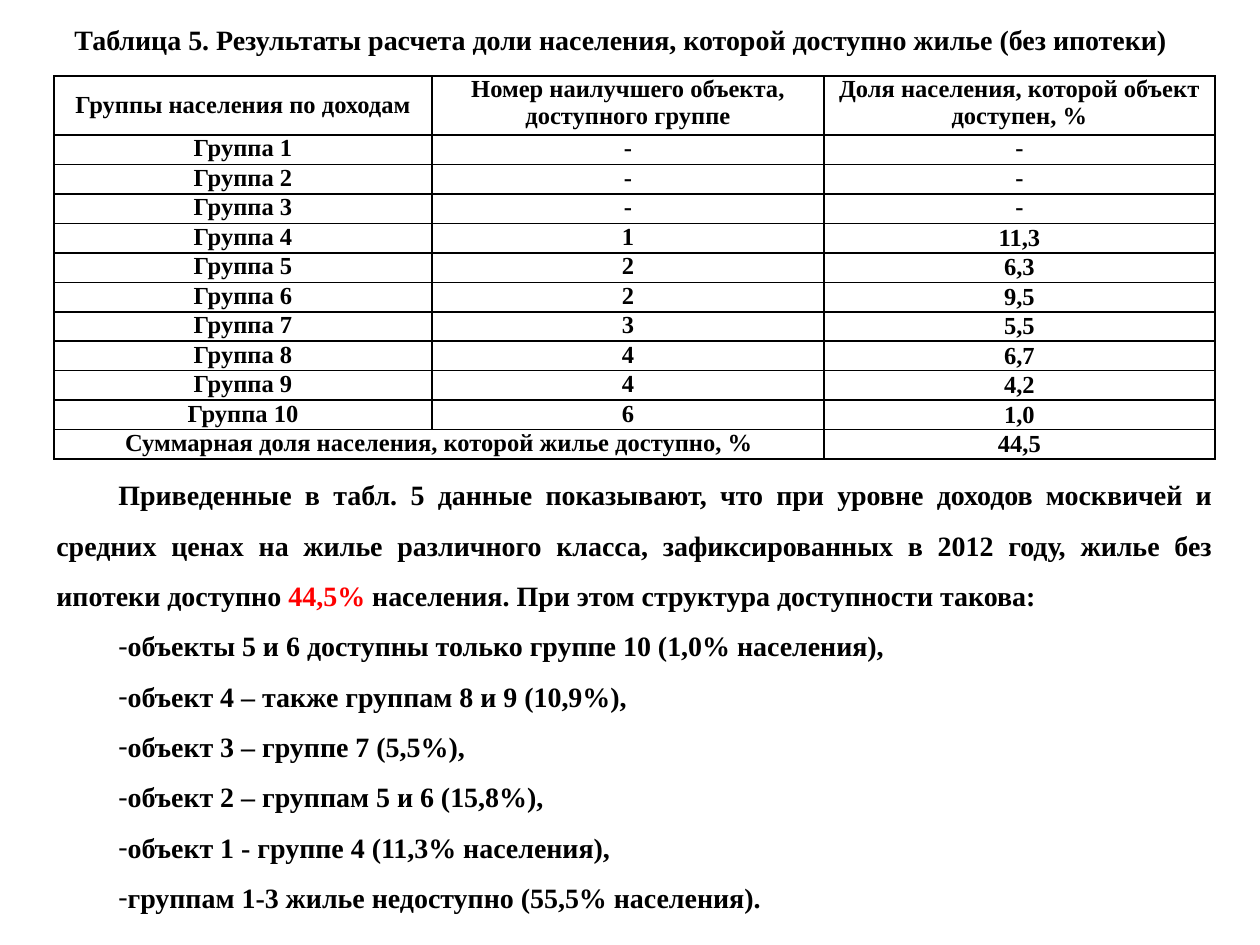
import pptx
import pptx.util
import pptx.dml.color
import pptx.enum.text
from lxml import etree
from pptx.oxml import parse_xml
from pptx.oxml.ns import nsdecls, qn

PX = 914400 // 126
BLACK = pptx.dml.color.RGBColor(0x00, 0x00, 0x00)
RED = pptx.dml.color.RGBColor(0xFF, 0x00, 0x00)
FONT = "Times New Roman"
ALIGN = pptx.enum.text.PP_ALIGN
ANCHOR = pptx.enum.text.MSO_ANCHOR
INDENT = 62 * PX


def format_runs(paragraph, size):
    for run in paragraph.runs:
        run.font.name = FONT
        run.font.size = pptx.util.Pt(size)
        run.font.bold = True
        run.font.color.rgb = BLACK


def add_text_box(left, top, width, height, wrap):
    shape = slide.shapes.add_textbox(left * PX, top * PX, width * PX, height * PX)
    frame = shape.text_frame
    frame.word_wrap = wrap
    frame.auto_size = pptx.enum.text.MSO_AUTO_SIZE.SHAPE_TO_FIT_TEXT
    frame.vertical_anchor = ANCHOR.MIDDLE
    return frame


presentation = pptx.Presentation()
presentation.slide_width = pptx.util.Inches(10)
presentation.slide_height = pptx.util.Inches(7.5)
slide = presentation.slides.add_slide(presentation.slide_layouts[6])

# Title
title = add_text_box(0, 16, 1203, 47, False).paragraphs[0]
title.text = "Таблица 5. Результаты расчета доли населения, которой доступно жилье (без ипотеки)"
title.alignment = ALIGN.LEFT
title._p.get_or_add_pPr().set("indent", str(INDENT))
format_runs(title, 16)

# Table
best_objects = ["-", "-", "-", "1", "2", "2", "3", "4", "4", "6"]
shares = ["-", "-", "-", "11,3", "6,3", "9,5", "5,5", "6,7", "4,2", "1,0"]
rows = [("Группы населения по доходам",
         "Номер наилучшего объекта, доступного группе",
         "Доля населения, которой объект доступен, %")]
for number, (best_object, share) in enumerate(zip(best_objects, shares), 1):
    rows.append((f"Группа {number}", best_object, share))
rows.append(("Суммарная доля населения, которой жилье доступно, %", "", "44,5"))

COLUMN_WIDTHS = (378, 392, 391)
HEADER_HEIGHT, BODY_HEIGHT = 59, 323
table = slide.shapes.add_table(
    len(rows), 3, 54 * PX, 76 * PX,
    sum(COLUMN_WIDTHS) * PX, (HEADER_HEIGHT + BODY_HEIGHT) * PX).table
for column, width in zip(table.columns, COLUMN_WIDTHS):
    column.width = width * PX
for row in table.rows:
    row.height = BODY_HEIGHT * PX // (len(rows) - 1)
table.rows[0].height = HEADER_HEIGHT * PX
table.cell(len(rows) - 1, 0).merge(table.cell(len(rows) - 1, 1))

for row_index, values in enumerate(rows):
    for column_index, value in enumerate(values):
        cell = table.cell(row_index, column_index)
        cell.margin_left = cell.margin_right = 9 * PX
        cell.margin_top = cell.margin_bottom = 0
        is_corner = row_index == 0 and column_index == 0
        is_number = row_index > 3 and column_index == 2
        cell.vertical_anchor = ANCHOR.MIDDLE if is_corner or is_number else ANCHOR.TOP
        cell.fill.background()
        for position, side in enumerate(("lnL", "lnR", "lnT", "lnB")):
            border = parse_xml(
                f'<a:{side} {nsdecls("a")} w="12700"><a:solidFill>'
                f'<a:srgbClr val="{BLACK}"/></a:solidFill></a:{side}>')
            cell._tc.get_or_add_tcPr().insert(position, border)
        if value:
            paragraph = cell.text_frame.paragraphs[0]
            paragraph.text = value
            paragraph.alignment = ALIGN.CENTER
            format_runs(paragraph, 14)

# Conclusions
introduction = (
    "Приведенные в табл. 5 данные показывают, что при уровне доходов москвичей "
    "и средних ценах на жилье различного класса, зафиксированных в 2012 году, "
    "жилье без ипотеки доступно ",
    "44,5%",
    " населения. При этом структура доступности такова:")
findings = [
    "объекты 5 и 6 доступны только группе 10 (1,0% населения),",
    "объект 4 – также группам 8 и 9 (10,9%),",
    "объект 3 – группе 7 (5,5%),",
    "объект 2 – группам 5 и 6 (15,8%),",
    "объект 1 - группе 4 (11,3% населения),",
    "группам 1-3 жилье недоступно (55,5% населения).",
]
conclusions = add_text_box(44, 452, 1181, 471, True)
for index, parts in enumerate([introduction] + [(finding,) for finding in findings]):
    paragraph = conclusions.add_paragraph() if index else conclusions.paragraphs[0]
    for part in parts:
        paragraph.add_run().text = part
    paragraph.alignment = ALIGN.JUSTIFY
    paragraph.line_spacing = 1.5
    format_runs(paragraph, 16)
    properties = paragraph._p.get_or_add_pPr()
    properties.set("marL", "0")
    properties.set("indent", str(INDENT))
    if index:
        etree.SubElement(properties, qn("a:buFont"), typeface=FONT)
        etree.SubElement(properties, qn("a:buChar"), char="-")
conclusions.paragraphs[0].runs[1].font.color.rgb = RED

presentation.save("out.pptx")
